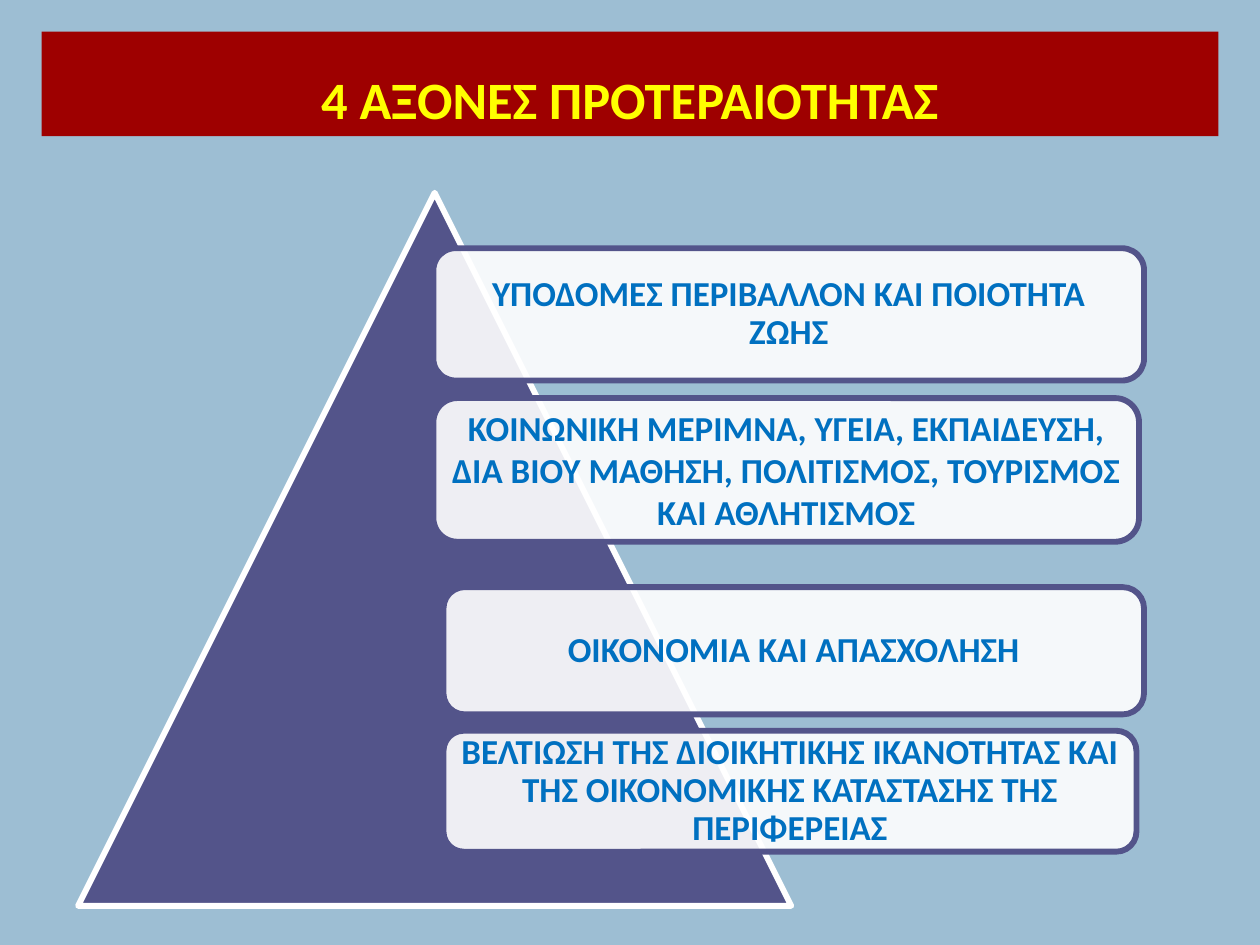
from lxml.etree import SubElement
from pptx import Presentation
from pptx.dml.color import RGBColor
from pptx.enum.shapes import MSO_SHAPE as Preset
from pptx.enum.text import MSO_ANCHOR as Anchor, MSO_AUTO_SIZE as AutoSize, PP_ALIGN as Align
from pptx.oxml.ns import qn
from pptx.util import Inches, Pt

BACKGROUND = RGBColor(0x9D, 0xBE, 0xD3)
BANNER = RGBColor(0x9E, 0x00, 0x00)
YELLOW = RGBColor(0xFF, 0xFF, 0x00)
PURPLE = RGBColor(0x53, 0x54, 0x8A)
WHITE = RGBColor(0xFF, 0xFF, 0xFF)
BLUE = RGBColor(0x00, 0x70, 0xC0)
OUTLINE = Pt(3.35)

# left, top, width, height in inches, line spacing, text runs as (text, size, font)
AXES = [
    (3.44, 1.97, 5.64, 1.05, 0.9,
     [("ΥΠΟΔΟΜΕΣ ΠΕΡΙΒΑΛΛΟΝ ΚΑΙ ΠΟΙΟΤΗΤΑ ΖΩΗΣ", 20, "Calibri")]),
    (3.44, 3.16, 5.60, 1.14, 1.0,
     [("ΚΟΙΝΩΝΙΚΗ", 20, "Calibri"),
      (" ", 15, "TeX Gyre Schola"),
      ("ΜΕΡΙΜΝΑ, ΥΓΕΙΑ, ΕΚΠΑΙΔΕΥΣΗ, ΔΙΑ ΒΙΟΥ ΜΑΘΗΣΗ, ΠΟΛΙΤΙΣΜΟΣ, "
       "ΤΟΥΡΙΣΜΟΣ ΚΑΙ ΑΘΛΗΤΙΣΜΟΣ", 20, "Calibri")]),
    (3.52, 4.66, 5.56, 1.01, 0.9,
     [("ΟΙΚΟΝΟΜΙΑ ΚΑΙ ΑΠΑΣΧΟΛΗΣΗ", 20, "Calibri")]),
    (3.52, 5.80, 5.50, 0.96, 0.9,
     [("ΒΕΛΤΙΩΣΗ ΤΗΣ ΔΙΟΙΚΗΤΙΚΗΣ ΙΚΑΝΟΤΗΤΑΣ ΚΑΙ ΤΗΣ ΟΙΚΟΝΟΜΙΚΗΣ "
       "ΚΑΤΑΣΤΑΣΗΣ ΤΗΣ ΠΕΡΙΦΕΡΕΙΑΣ", 20, "Calibri")]),
]


def add_outlined_shape(preset, box, fill, line):
    shape = slide.shapes.add_shape(preset, *map(Inches, box))
    shape.shadow.inherit = False
    shape.fill.solid()
    shape.fill.fore_color.rgb = fill
    shape.line.color.rgb = line
    shape.line.width = OUTLINE
    return shape


def write_centred(frame, runs, color, anchor, spacing):
    """Fill the frame with one bold, centred paragraph."""
    frame.word_wrap = True
    frame.auto_size = AutoSize.NONE
    frame.vertical_anchor = anchor
    paragraph = frame.paragraphs[0]
    paragraph.alignment = Align.CENTER
    paragraph.line_spacing = spacing
    for text, size, font in runs:
        run = paragraph.add_run()
        run.text = text
        run.font.size = Pt(size)
        run.font.name = font
        run.font.bold = True
        run.font.color.rgb = color


presentation = Presentation()
presentation.slide_width = Inches(10)
presentation.slide_height = Inches(7.5)
slide = presentation.slides.add_slide(presentation.slide_layouts[5])
slide.background.fill.solid()
slide.background.fill.fore_color.rgb = BACKGROUND

# Title banner, with equal side margins
title = slide.shapes.title
title.left, title.top = Inches(0.33), Inches(0.25)
title.width = presentation.slide_width - 2 * title.left
title.height = Inches(0.83)
title.fill.solid()
title.fill.fore_color.rgb = BANNER
write_centred(title.text_frame, [("4 ΑΞΟΝΕΣ ΠΡΟΤΕΡΑΙΟΤΗΤΑΣ", 30, "Calibri")],
              YELLOW, Anchor.BOTTOM, 1.0)

# Pyramid with the four priority axes over its right side
add_outlined_shape(Preset.ISOSCELES_TRIANGLE, (0.62, 1.53, 5.66, 5.66), PURPLE, WHITE)
for *box, spacing, runs in AXES:
    axis = add_outlined_shape(Preset.ROUNDED_RECTANGLE, box, WHITE, PURPLE)
    fill_color = axis.fill._xPr.find(qn("a:solidFill")).find(qn("a:srgbClr"))
    SubElement(fill_color, qn("a:alpha"), val="90000")
    frame = axis.text_frame
    frame.margin_left = frame.margin_right = Inches(0.08)
    frame.margin_top = frame.margin_bottom = Inches(0.08)
    write_centred(frame, runs, BLUE, Anchor.MIDDLE, spacing)

presentation.save("out.pptx")
